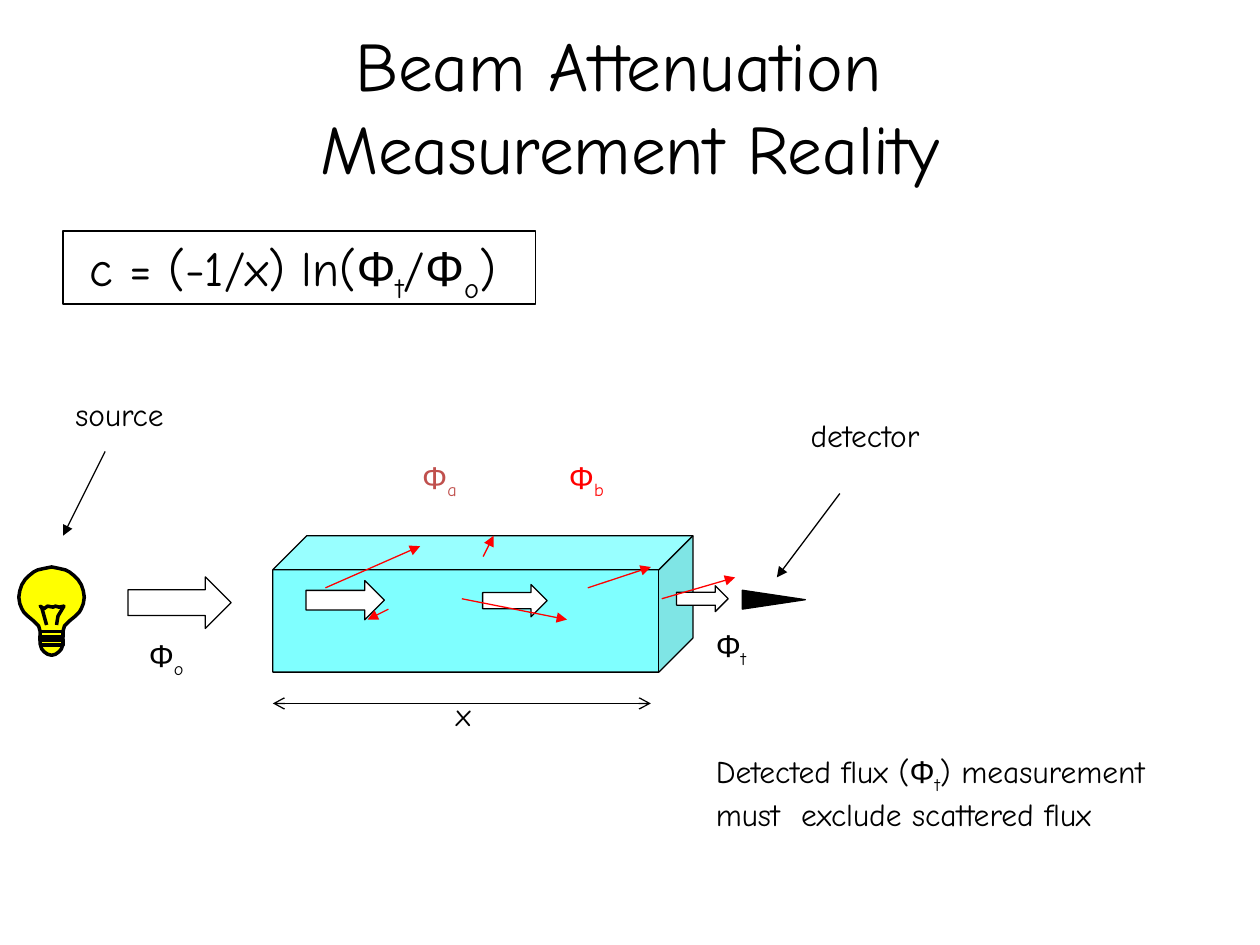
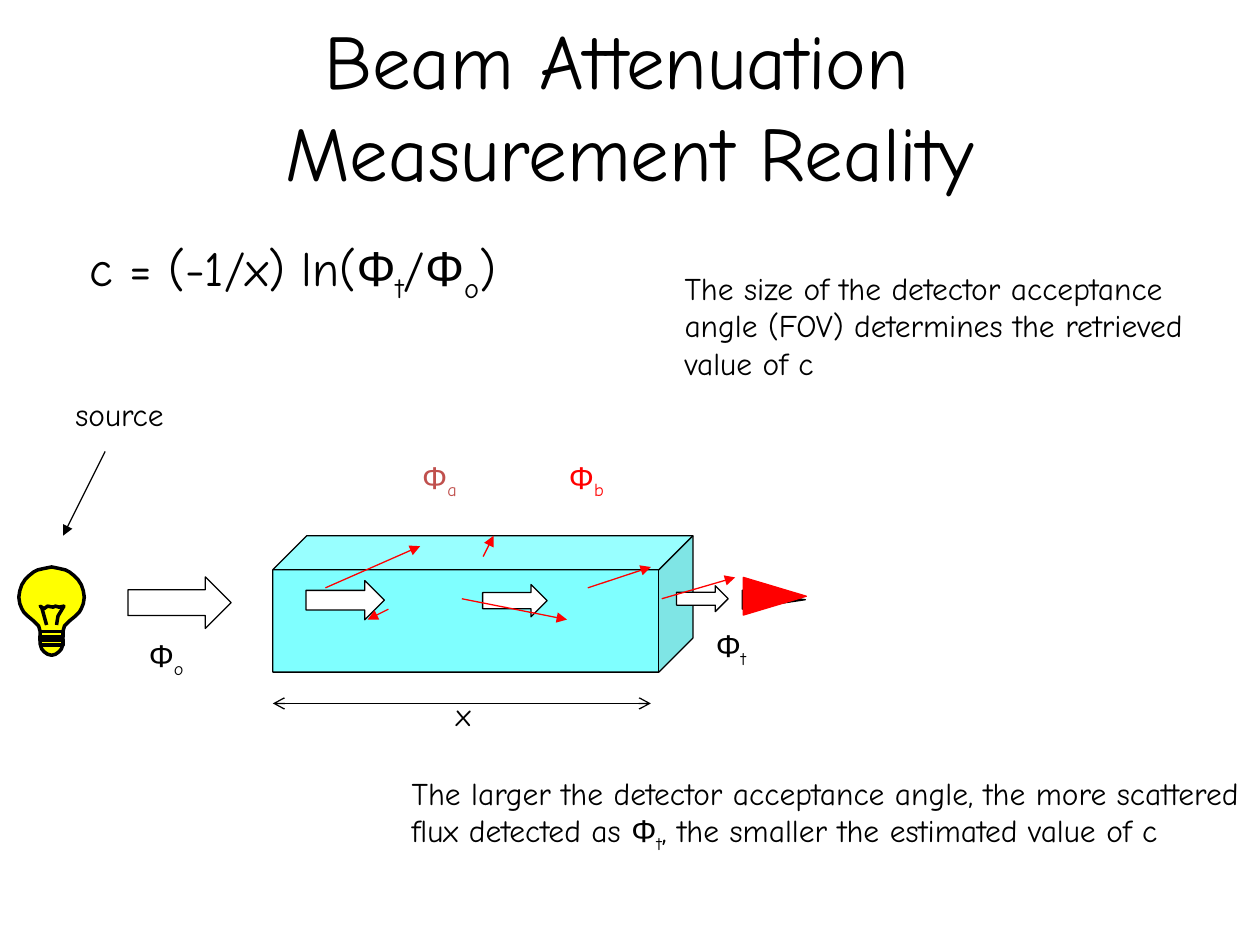
from dataclasses import dataclass
from itertools import groupby

from lxml.etree import SubElement
from pptx import Presentation
from pptx.dml.color import RGBColor
from pptx.enum.shapes import MSO_CONNECTOR as Connector, MSO_SHAPE as Preset
from pptx.enum.text import MSO_ANCHOR as Anchor, PP_ALIGN as Align
from pptx.oxml.ns import qn
from pptx.util import Cm, Pt


@dataclass(frozen=True)
class Theme:
    black: str = "000000"
    white: str = "FFFFFF"
    water: str = "00FFFF"
    glow: str = "FFFF00"
    scattered: str = "FF0000"
    absorbed: str = "C0504D"
    text_font: str = "Comic Neue"
    symbol_font: str = "Arial"
    formula_size: float = 28
    label_size: float = 18
    thin: float = 0.75
    thick: float = 2


THEME = Theme()

# All positions are in centimetres. "_" makes the next character a subscript.
SLIDE_SIZE = (25.4, 19.05)
TITLE = "Beam Attenuation \vMeasurement Reality"
FORMULA = "c = (-1/x) ln(Φ_t/Φ_o)"
FORMULA_AREA = (1.27, 4.66, 9.53, 1.47)
FORMULA_INDENT = 0.53
WATER_AREA = (5.5, 10.8, 8.47, 2.75)
LABEL_HEIGHT = 1.27

# text, left, top, width, colour
LABELS = [
    ("Φ_o", 2.75, 12.7, 1.7, THEME.black),
    ("Φ_t", 14.18, 12.49, 2.1, THEME.black),
    ("Φ_a", 8.26, 9.1, 1.45, THEME.absorbed),
    ("Φ_b", 11.22, 9.1, 1.47, THEME.scattered),
    ("x", 8.94, 13.89, 1.02, THEME.black),
    ("source", 1.27, 7.83, 3.12, THEME.black),
]
DETECTOR_LABEL = ("detector", 16.09, 8.26, 4.01, THEME.black)

# left, middle height, length; each arrow is half as tall as it is long
BEAM_ARROWS = [
    (2.58, 12.15, 2.08),
    (6.17, 12.1, 1.58),
    (9.73, 12.11, 1.3),
    (13.64, 12.07, 1.04),
]

# start and end points
SCATTERED_RAYS = [
    ((6.56, 11.85), (8.47, 11.01)),
    ((7.83, 12.28), (7.41, 12.49)),
    ((9.31, 12.07), (11.43, 12.49)),
    ((9.74, 11.22), (9.95, 10.8)),
    ((11.85, 11.85), (13.12, 11.43)),
    ((13.34, 12.07), (14.82, 11.64)),
]
PATH_LENGTH = ((5.5, 14.18), (13.12, 14.18))
SOURCE_POINTER = ((2.12, 9.1), (1.27, 10.8))
DETECTOR_POINTER = ((16.93, 9.95), (15.66, 11.64))

# middle x, middle y, opening; the cone is DETECTOR_DEPTH long
DETECTOR_DEPTH = 1.27
NARROW_DETECTOR = (15.6, 12.09, 0.38)
WIDE_DETECTOR = (15.62, 12.02, 0.76)

# Bulb points are (distance from the bulb's axis, height on the slide).
BULB_AXIS = 1.04
BULB_HALF = [
    (0, 11.43), (0.15, 11.46), (0.28, 11.49), (0.36, 11.53), (0.46, 11.61),
    (0.53, 11.68), (0.6, 11.79), (0.64, 11.91), (0.66, 12.04), (0.64, 12.17),
    (0.6, 12.27), (0.56, 12.34), (0.48, 12.42), (0.36, 12.52), (0.26, 12.62),
    (0.23, 12.73), (0.23, 12.98), (0.2, 13.08), (0.15, 13.14), (0.08, 13.19),
    (0, 13.21),
]
FILAMENT = [
    (-0.1, 12.6), (-0.15, 12.42), (-0.2, 12.24), (-0.23, 12.22),
    (-0.15, 12.27), (-0.08, 12.22), (0.03, 12.24), (0.08, 12.22),
    (0.15, 12.24), (0.25, 12.22), (0.13, 12.42), (0.1, 12.6),
]
SCREW_THREAD = [
    (-0.23, 12.73), (0.23, 12.73), (0.23, 12.83), (-0.23, 12.83),
    (-0.23, 12.9), (0.23, 12.9), (0.23, 13), (-0.23, 13),
]

PAGES = [
    {
        "title_area": (0, 0.43, 25.4, 3.38),
        "title_size": 39.6,
        "formula_border": THEME.black,
        "labels": LABELS + [DETECTOR_LABEL],
        "pointers": [SOURCE_POINTER, DETECTOR_POINTER],
        "detectors": [(NARROW_DETECTOR, THEME.black)],
        "notes": [
            ("Detected flux (Φ_t) measurement must  exclude scattered flux",
             (14.18, 15.03, 10.37, 3.3)),
        ],
    },
    {
        "title_area": (0, 0, 25.4, 4.23),
        "title_size": 44,
        "formula_border": None,
        "labels": LABELS,
        "pointers": [SOURCE_POINTER],
        "detectors": [(NARROW_DETECTOR, THEME.black),
                      (WIDE_DETECTOR, THEME.scattered)],
        "notes": [
            ("The size of the detector acceptance angle (FOV) determines "
             "the retrieved value of c", (13.55, 5.29, 11.22, 4.32)),
            ("The larger the detector acceptance angle, the more scattered "
             "flux detected as Φ_t, the smaller the estimated value of c",
             (8.05, 15.47, 17.35, 2.57)),
        ],
    },
]


def rgb(colour):
    return RGBColor.from_string(colour)


def in_cm(values):
    return [Cm(value) for value in values]


def paint(shape, fill=None, line=THEME.black, width=THEME.thin):
    shape.shadow.inherit = False
    if fill:
        shape.fill.solid()
        shape.fill.fore_color.rgb = rgb(fill)
    else:
        shape.fill.background()
    shape.line.color.rgb = rgb(line)
    shape.line.width = Pt(width)


def style(span, size, colour, font=THEME.text_font):
    span.font.size = Pt(size)
    span.font.name = font
    span.font.color.rgb = rgb(colour)


def split_spans(text):
    """Yield (kind, text) pieces: plain, symbol or subscript."""
    marked = []
    for before, char in zip(" " + text, text):
        if char != "_":
            kind = "symbol" if char == "Φ" else "plain"
            marked.append(("subscript" if before == "_" else kind, char))
    for kind, group in groupby(marked, key=lambda item: item[0]):
        yield kind, "".join(char for _, char in group)


def add_text(page, text, area, size=THEME.label_size, colour=THEME.black):
    box = page.shapes.add_textbox(*in_cm(area))
    box.text_frame.word_wrap = True
    para = box.text_frame.paragraphs[0]
    for kind, piece in split_spans(text):
        span = para.add_run()
        span.text = piece
        style(span, size, colour,
              THEME.symbol_font if kind == "symbol" else THEME.text_font)
        if kind == "subscript":
            span._r.get_or_add_rPr().set("baseline", "-25000")
    return box


def add_title(page, area, size):
    box = page.shapes.add_textbox(*in_cm(area))
    frame = box.text_frame
    frame.word_wrap = True
    frame.vertical_anchor = Anchor.MIDDLE
    frame.text = TITLE
    para = frame.paragraphs[0]
    para.alignment = Align.CENTER
    for span in para.runs:
        style(span, size, THEME.black)


def add_formula(page, border):
    box = add_text(page, FORMULA, FORMULA_AREA, THEME.formula_size)
    box.text_frame.margin_left = Cm(FORMULA_INDENT)
    if border:
        paint(box, line=border)


def add_line(page, points, colour=THEME.black, head=None, tail="triangle"):
    start, end = points
    line = page.shapes.add_connector(
        Connector.STRAIGHT, *in_cm(start), *in_cm(end))
    line.line.color.rgb = rgb(colour)
    line.line.width = Pt(THEME.thin)
    outline = line.line._get_or_add_ln()
    for tag, kind in (("a:headEnd", head), ("a:tailEnd", tail)):
        if kind:
            SubElement(outline, qn(tag), type=kind)
    SubElement(line._element.spPr, qn("a:effectLst"))


def add_water(page):
    cube = page.shapes.add_shape(Preset.CUBE, *in_cm(WATER_AREA))
    paint(cube, THEME.water)
    colour = cube._element.spPr.find(qn("a:solidFill"))[0]
    SubElement(colour, qn("a:alpha"), val="50000")


def add_beam_arrow(page, left, middle, length):
    height = length / 2
    area = (left, middle - height / 2, length, height)
    paint(page.shapes.add_shape(Preset.RIGHT_ARROW, *in_cm(area)), THEME.white)


def add_detector(page, middle_x, middle_y, opening, colour):
    area = (middle_x - opening / 2, middle_y - DETECTOR_DEPTH / 2,
            opening, DETECTOR_DEPTH)
    cone = page.shapes.add_shape(Preset.ISOSCELES_TRIANGLE, *in_cm(area))
    cone.rotation = 90
    paint(cone, colour, colour)


def add_bulb(page):
    def place(points):
        return [(Cm(BULB_AXIS + x), Cm(y)) for x, y in points]

    left_half = [(-x, y) for x, y in reversed(BULB_HALF[1:-1])]
    outline = place(BULB_HALF + left_half)
    glass = page.shapes.build_freeform(*outline[0])
    glass.add_line_segments(outline[1:])
    paint(glass.convert_to_shape(), THEME.glow, width=THEME.thick)

    filament, thread = place(FILAMENT), place(SCREW_THREAD)
    wires = page.shapes.build_freeform(*filament[0])
    wires.add_line_segments(filament[1:], close=False)
    wires.move_to(*thread[0])
    wires.add_line_segments(thread[1:], close=False)
    paint(wires.convert_to_shape(), width=THEME.thick)


def add_page(deck, content):
    page = deck.slides.add_slide(deck.slide_layouts[6])
    add_water(page)
    add_title(page, content["title_area"], content["title_size"])
    add_formula(page, content["formula_border"])
    for text, left, top, width, colour in content["labels"]:
        add_text(page, text, (left, top, width, LABEL_HEIGHT), colour=colour)
    for arrow in BEAM_ARROWS:
        add_beam_arrow(page, *arrow)
    for ray in SCATTERED_RAYS:
        add_line(page, ray, THEME.scattered)
    add_line(page, PATH_LENGTH, head="arrow", tail="arrow")
    for pointer in content["pointers"]:
        add_line(page, pointer)
    for detector, colour in content["detectors"]:
        add_detector(page, *detector, colour)
    add_bulb(page)
    for text, area in content["notes"]:
        add_text(page, text, area)


def main():
    deck = Presentation()
    deck.slide_width, deck.slide_height = in_cm(SLIDE_SIZE)
    for content in PAGES:
        add_page(deck, content)
    deck.save("out.pptx")


if __name__ == "__main__":
    main()
